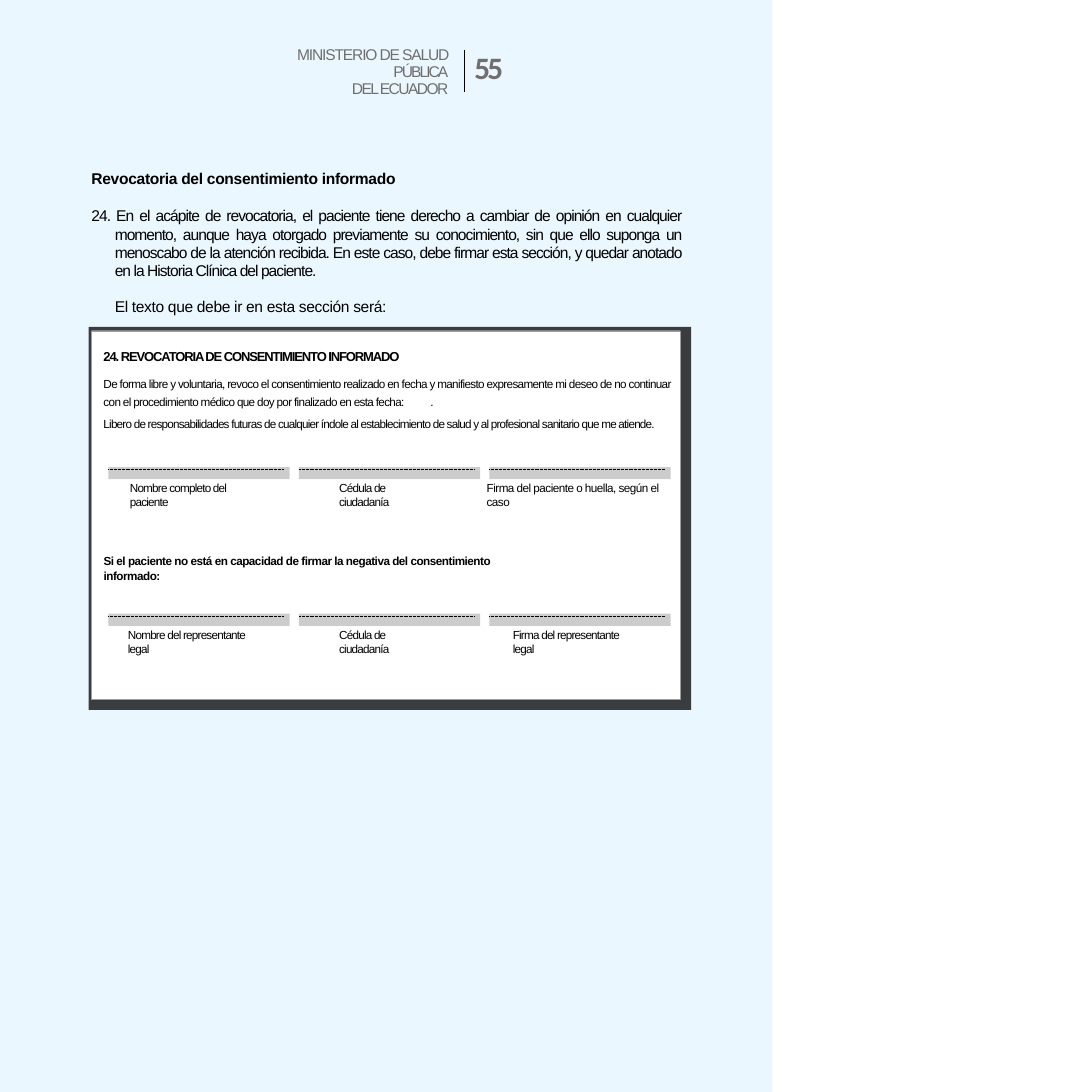
import pptx
import pptx.dml.color
import pptx.enum.dml
import pptx.enum.shapes
import pptx.enum.text
import pptx.oxml
import pptx.oxml.ns
import pptx.util

Pt = pptx.util.Pt
RGBColor = pptx.dml.color.RGBColor
Align = pptx.enum.text.PP_ALIGN
qn = pptx.oxml.ns.qn

BLACK = RGBColor(0x00, 0x00, 0x00)
WHITE = RGBColor(0xFF, 0xFF, 0xFF)
GREY = RGBColor(0x70, 0x6F, 0x6F)
BORDER = RGBColor(0x9D, 0x9D, 0x9C)
PALE_BLUE = RGBColor(0xEB, 0xF7, 0xFE)

SIDE = 841.68
PANEL_WIDTH = 595.44

HEADER = [
    dict(runs=[("MINISTERIO DE SALUD ", -0.87), ("PÚBLICA", -1.5)],
         color=GREY, align=Align.RIGHT, line=Pt(13.2)),
    dict(runs=[("DEL ECUADOR", -1.2)], color=GREY, align=Align.RIGHT, line=Pt(13.2)),
]
PAGE_NUMBER = [dict(runs=[("55", -2.1)], size=24, font="Calibri", color=GREY, bold=True)]

BODY = [
    dict(runs=[("Revocatoria del consentimiento informado", -0.23)], bold=True, left=0.7),
    dict(runs=[("24. En el acápite de revocatoria, el paciente tiene derecho a cambiar de "
                "opinión en cualquier momento, aunque haya otorgado previamente su "
                "conocimiento, sin que ello suponga un menoscabo de la atención recibida. "
                "En este caso, debe firmar esta sección, y quedar anotado en la Historia "
                "Clínica del paciente.", -0.75)],
         align=Align.JUSTIFY, left=18.7, indent=-18, line=Pt(14), before=14.4),
    dict(runs=[("El texto que debe ir en esta sección será:", -0.25)], left=18.7, before=13.2),
    dict(runs=[("24. REVOCATORIA DE CONSENTIMIENTO INFORMADO", -0.82)],
         size=10, bold=True, left=10, before=25.9),
    dict(runs=[("De forma libre y voluntaria, revoco el consentimiento realizado en fecha y "
                "manifiesto expresamente mi deseo de no continuar con el procedimiento médico "
                "que doy por finalizado en esta fecha:", -0.52), ("\t", 0), (".", 0)],
         size=9, left=10, line=1.3, before=6.1, tab=274.3),
    dict(runs=[("Libero de responsabilidades futuras de cualquier índole al establecimiento de "
                "salud y al profesional sanitario que me atiende.", -0.59)],
         size=9, left=10, before=6),
]
INCAPACITY = [dict(runs=[("Si el paciente no está en capacidad de firmar la negativa del "
                          "consentimiento informado:", -0.37)], size=9, bold=True)]

SIGNATURE_ROWS = [
    (360, [("Nombre completo del paciente", 100.1, 101.5, -0.6),
           ("Cédula de ciudadanía", 261.4, 71.3, -0.6),
           ("Firma del paciente o huella, según el caso", 375.1, 138.2, -0.4)]),
    (473, [("Nombre del representante legal", 98.6, 104.4, -0.6),
           ("Cédula de ciudadanía", 261.4, 71.3, -0.6),
           ("Firma del representante legal", 395.3, 96.5, -0.6)]),
]
COLUMN_LEFT, COLUMN_PITCH = 83.5, 146.9
BAR_WIDTH, BAR_HEIGHT = 139.7, 9.4
RULE_WIDTH, RULE_DROP = 135.4, 1.6
LABEL_DROP = 10.8


def add_rectangle(left, top, width, height, color, alpha=None, border=None):
    shape = slide.shapes.add_shape(pptx.enum.shapes.MSO_SHAPE.RECTANGLE,
                                   Pt(left), Pt(top), Pt(width), Pt(height))
    shape.shadow.inherit = False
    shape.fill.solid()
    shape.fill.fore_color.rgb = color
    if alpha:
        color_element = shape.fill._xPr.find(".//" + qn("a:srgbClr"))
        pptx.oxml.ns.qn
        color_element.append(pptx.oxml.parse_xml(
            '<a:alpha xmlns:a="http://schemas.openxmlformats.org/drawingml/2006/main" '
            f'val="{alpha * 1000}"/>'))
    if border:
        shape.line.color.rgb = border
        shape.line.width = Pt(0.25)
    else:
        shape.line.fill.background()


def add_line(left, top, right, bottom, dotted=False):
    connector = slide.shapes.add_connector(pptx.enum.shapes.MSO_CONNECTOR.STRAIGHT,
                                           Pt(left), Pt(top), Pt(right), Pt(bottom))
    connector.line.color.rgb = BLACK
    connector.line.width = Pt(0.25)
    properties = connector._element.spPr
    if dotted:
        connector.line.dash_style = pptx.enum.dml.MSO_LINE.ROUND_DOT
        properties.find(".//" + qn("a:prstDash")).set("val", "dot")
    properties.append(pptx.oxml.parse_xml(
        '<a:effectLst xmlns:a="http://schemas.openxmlformats.org/drawingml/2006/main"/>'))


def fill_paragraph(paragraph, runs, size=12, font="Arial", color=BLACK, bold=False,
                   align=Align.LEFT, left=0, indent=0, line=None, before=0, tab=None):
    paragraph.alignment = align
    paragraph.space_before = Pt(before)
    if line:
        paragraph.line_spacing = line
    properties = paragraph._p.get_or_add_pPr()
    properties.set("marL", str(Pt(left)))
    properties.set("indent", str(Pt(indent)))
    if tab:
        properties.append(pptx.oxml.parse_xml(
            '<a:tabLst xmlns:a="http://schemas.openxmlformats.org/drawingml/2006/main">'
            f'<a:tab pos="{Pt(tab)}" algn="l"/></a:tabLst>'))
    for text, spacing in runs:
        run = paragraph.add_run()
        run.text = text
        run.font.size = Pt(size)
        run.font.name = font
        run.font.bold = bold
        run.font.underline = text == "\t"
        run.font.color.rgb = color
        run._r.get_or_add_rPr().set("spc", str(round(spacing * 100)))


def add_text(left, top, width, height, paragraphs):
    frame = slide.shapes.add_textbox(Pt(left), Pt(top), Pt(width), Pt(height)).text_frame
    frame.word_wrap = True
    frame.margin_left = frame.margin_top = frame.margin_right = frame.margin_bottom = 0
    for index, content in enumerate(paragraphs):
        paragraph = frame.add_paragraph() if index else frame.paragraphs[0]
        fill_paragraph(paragraph, **content)


presentation = pptx.Presentation()
presentation.slide_width = presentation.slide_height = Pt(SIDE)
slide = presentation.slides.add_slide(presentation.slide_layouts[6])

add_rectangle(0, 0, PANEL_WIDTH, SIDE, PALE_BLUE)
add_text(365.7, 37, 26.6, 31, PAGE_NUMBER)
add_line(357.8, 38.2, 357.8, 71.3)
add_text(197.3, 35.5, 148.3, 40, HEADER)
add_rectangle(68.4, 252, 464.4, 295.2, BLACK, alpha=75)
add_rectangle(70.6, 254.9, 453.6, 284.4, WHITE, border=BORDER)
add_text(69.8, 130.6, 455.8, 203, BODY)
add_text(79.9, 427.2, 335.5, 21, INCAPACITY)

for row_top, labels in SIGNATURE_ROWS:
    for column, (text, label_left, label_width, spacing) in enumerate(labels):
        bar_left = COLUMN_LEFT + column * COLUMN_PITCH
        rule_top = row_top + RULE_DROP
        add_text(label_left, row_top + LABEL_DROP, label_width, 21,
                 [dict(runs=[(text, spacing)], size=9)])
        add_rectangle(bar_left, row_top, BAR_WIDTH, BAR_HEIGHT, BLACK, alpha=20)
        add_line(bar_left, rule_top, bar_left + RULE_WIDTH, rule_top, dotted=True)

presentation.save("out.pptx")
